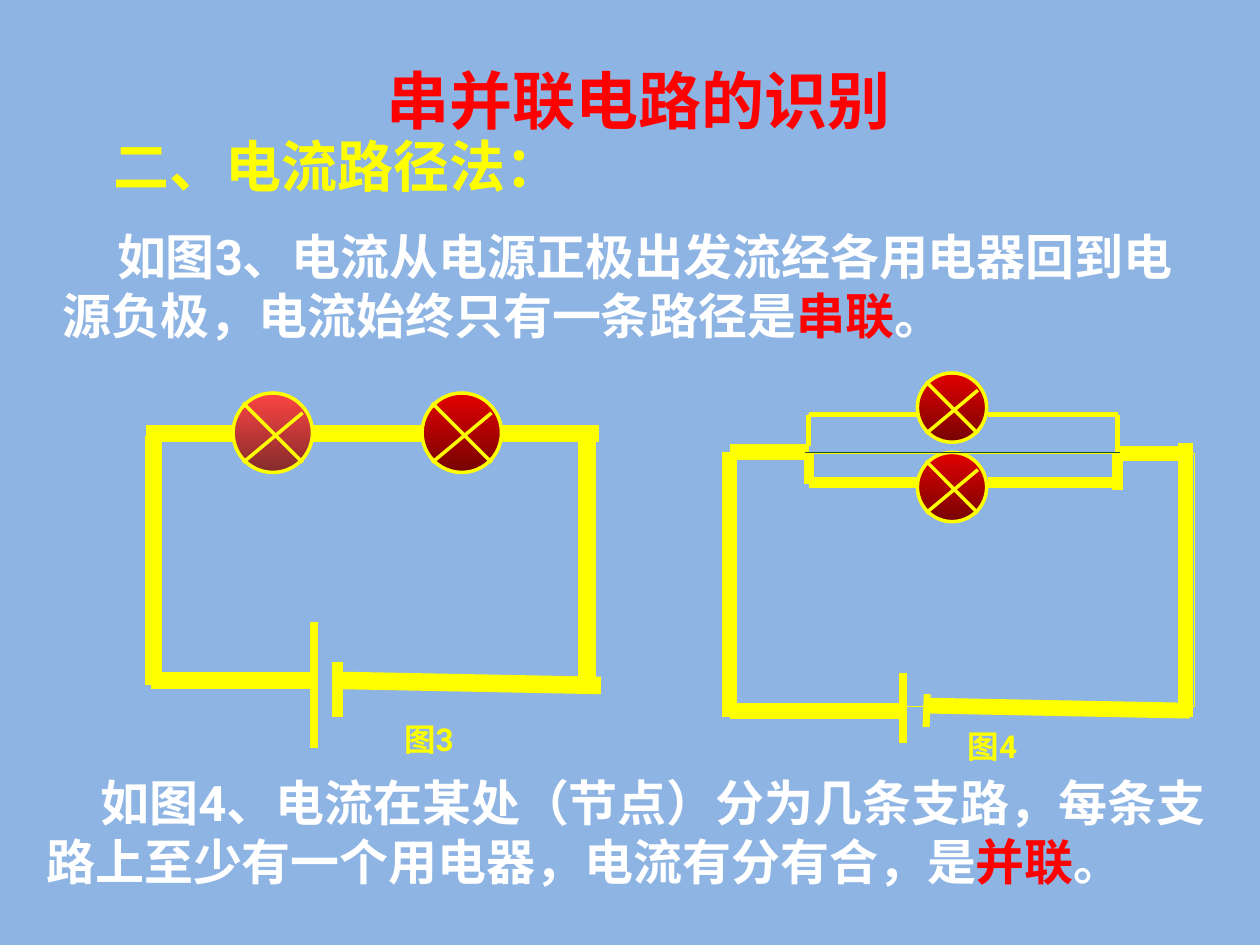
import pptx
import pptx.util
import pptx.dml.color
import pptx.enum.shapes
import pptx.enum.text
import pptx.oxml.ns
import lxml.etree

Pt = pptx.util.Pt
SHAPE = pptx.enum.shapes.MSO_SHAPE
ALIGN = pptx.enum.text.PP_ALIGN
ANCHOR = pptx.enum.text.MSO_ANCHOR
qn = pptx.oxml.ns.qn

COLORS = {
    "background": "8EB4E3",
    "wire": "FFFF00",
    "node": "235029",
    "dots": "000000",
    "white": "FFFFFF",
    "red": "FF0000",
    "yellow": "FFFF00",
}
BRIGHT = ("FE4444", "832B2B")
DARK = ("E30000", "760303")

SERIES_WIRES = [
    (0.75, [(198.7, 391, 334.8, 391), (90, 249.1, 335.5, 249.1),
            (90, 249.1, 90, 391.7), (335.5, 249.1, 335.5, 391.7),
            (90, 391.7, 179.3, 391.7)]),
    (4.5, [(179.3, 355.7, 179.3, 427.7)]),
    (6, [(193, 378, 193, 409.7)]),
    (10, [(179.3, 388.8, 86.4, 388.8), (87.8, 391.7, 87.8, 249.1),
          (83.5, 247.7, 342, 247.7), (335.5, 246.2, 335.5, 388.8),
          (343.4, 391.7, 193.7, 388.8)]),
]
PARALLEL_WIRES = [
    (4.5, [(516.2, 384.5, 516.2, 424.8)]),
    (9, [(516.2, 406.1, 416.9, 406.1), (416.9, 409.7, 416.9, 258.5),
         (416.9, 258.5, 462.2, 258.5), (638.6, 259.2, 680.4, 259.2),
         (677.5, 253.4, 677.5, 409.7), (679.7, 406.1, 529.2, 403.2)]),
    (6, [(462.2, 275.8, 529.9, 275.8), (564.5, 275.8, 638.6, 275.8),
         (462.2, 258.5, 462.2, 276.5), (638.6, 258.5, 638.6, 280)]),
    (3, [(462.2, 236.9, 529.9, 236.9), (564.5, 236.9, 638.6, 236.9),
         (462.2, 236.9, 462.2, 254.9), (638.6, 236.9, 638.6, 258.5)]),
    (4, [(529.9, 396.7, 529.2, 415.4)]),
]


def rgb(value):
    return pptx.dml.color.RGBColor.from_string(value)


def add_line(s, x1, y1, x2, y2, width, color="wire", dash=None):
    sp = s.shapes.add_connector(
        pptx.enum.shapes.MSO_CONNECTOR.STRAIGHT, Pt(x1), Pt(y1), Pt(x2), Pt(y2))
    sp.line.width = Pt(width)
    sp.line.color.rgb = rgb(COLORS[color])
    if dash:
        sp.line.dash_style = dash
    lxml.etree.SubElement(sp._element.spPr, qn("a:effectLst"))


def add_outline(s, kind, x, y, w, h, width):
    sp = s.shapes.add_shape(kind, Pt(x), Pt(y), Pt(w), Pt(h))
    sp.shadow.inherit = False
    sp.fill.background()
    sp.line.color.rgb = rgb(COLORS["wire"])
    sp.line.width = Pt(width)
    return sp


def add_wires(s, wires):
    for width, segments in wires:
        for segment in segments:
            add_line(s, *segment, width)


def add_lamp(s, x, y, d, shades):
    sp = add_outline(s, SHAPE.OVAL, x, y, d, d, 2)
    sp.fill.gradient()
    sp.fill.gradient_angle = 270
    for stop, shade in zip(sp.fill.gradient_stops, shades):
        stop.color.rgb = rgb(shade)
    near, far = 0.125 * d, 0.875 * d
    add_line(s, x + near, y + far, x + far, y + 0.25 * d, 2)
    add_line(s, x + near, y + near, x + far, y + far, 2)


def add_text(s, runs, x, y, w, h, size, font="Roboto", align=ALIGN.LEFT,
             anchor=ANCHOR.TOP, wrap=True, indent=0, spacing=None):
    tf = s.shapes.add_textbox(Pt(x), Pt(y), Pt(w), Pt(h)).text_frame
    tf.word_wrap = wrap
    tf.vertical_anchor = anchor
    p = tf.paragraphs[0]
    p.alignment = align
    if spacing:
        p.line_spacing = spacing
    if indent:
        p._p.get_or_add_pPr().set("indent", str(Pt(indent)))
    for text, color in runs:
        r = p.add_run()
        r.text = text
        r.font.size = Pt(size)
        r.font.bold = True
        r.font.color.rgb = rgb(COLORS[color])
        r.font.name = font
        ea = lxml.etree.SubElement(r._r.get_or_add_rPr(), qn("a:ea"))
        ea.set("typeface", font)


def draw_series_circuit(s):
    add_line(s, 193, 391.7, 218.2, 391.7, 0.75, "dots",
             pptx.enum.dml.MSO_LINE.ROUND_DOT)
    add_wires(s, SERIES_WIRES)
    add_lamp(s, 133.2, 224.6, 45.4, BRIGHT)
    add_lamp(s, 241.2, 224.6, 45.4, DARK)


def draw_parallel_circuit(s):
    add_outline(s, SHAPE.RECTANGLE, 462.2, 236.9, 176.4, 39.6, 0.75)
    add_wires(s, PARALLEL_WIRES)
    for y in (258.5, 213.1):
        add_lamp(s, 524.2, y, 39.6, DARK)
    add_outline(s, SHAPE.RECTANGLE, 418.3, 259.2, 264.2, 144.7, 0.75)
    add_line(s, 460.1, 258.5, 640.1, 258.5, 0.75, "node")


def main():
    prs = pptx.Presentation()
    prs.slide_width, prs.slide_height = Pt(720), Pt(540)
    s = prs.slides.add_slide(prs.slide_layouts[6])
    s.background.fill.solid()
    s.background.fill.fore_color.rgb = rgb(COLORS["background"])

    draw_series_circuit(s)
    draw_parallel_circuit(s)

    add_text(s, [("如图3、电流从电源正极出发流经各用电器回到电源负极，电流始终只有一条路径是", "white"),
                 ("串联", "red"), ("。", "white")],
             28.8, 126, 662.4, 74.9, 28, indent=31)
    add_text(s, [("如图4、电流在某处（节点）分为几条支路，每条支路上至少有一个用电器，电流有分有合，是", "white"),
                 ("并联", "red"), ("。", "white")],
             19.4, 437.8, 679, 74.9, 28, indent=31)
    add_text(s, [("串并联电路的识别", "red")], 49, 21.6, 631.4, 70.6, 36,
             font="Noto Sans CJK SC", align=ALIGN.CENTER, anchor=ANCHOR.MIDDLE)
    add_text(s, [("图3", "yellow")], 223.9, 408.2, 90, 28.8, 18)
    add_text(s, [("图4", "yellow")], 545.8, 411.8, 64.8, 28.8, 18)
    add_text(s, [("二、电流路径法：", "yellow")], 57.6, 79.2, 271.4, 38.2, 32,
             font="Calibri", wrap=False, spacing=0.8)
    prs.save("out.pptx")


if __name__ == "__main__":
    main()
